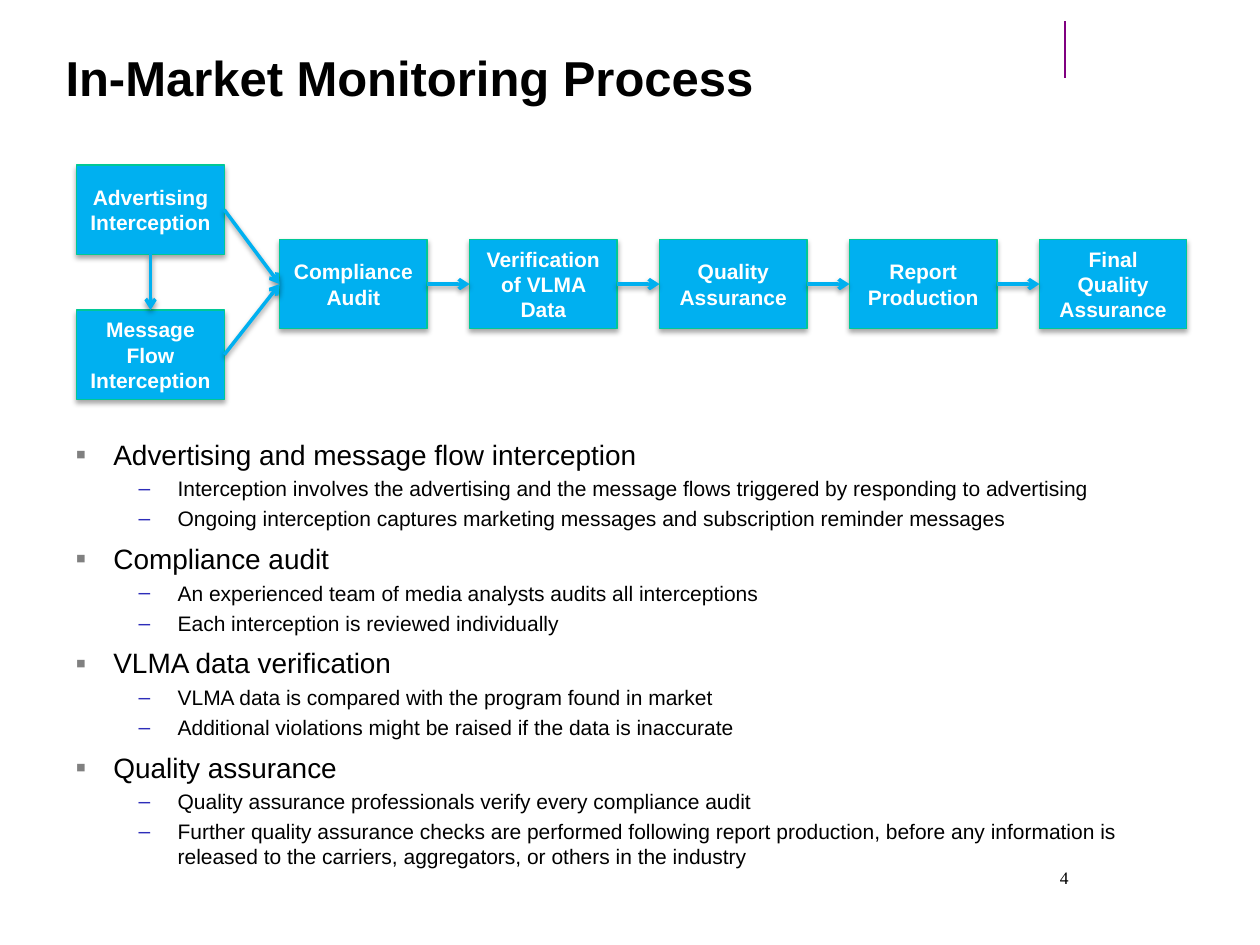
import pptx
import pptx.util
import pptx.dml.color
import pptx.enum.shapes
import pptx.enum.text
import pptx.oxml
import pptx.oxml.ns

Inches, Pt = pptx.util.Inches, pptx.util.Pt
Align = pptx.enum.text.PP_ALIGN
Anchor = pptx.enum.text.MSO_ANCHOR
Shape = pptx.enum.shapes.MSO_SHAPE
Straight = pptx.enum.shapes.MSO_CONNECTOR.STRAIGHT
NS = pptx.oxml.ns.nsdecls("a")


def tint(code):
    return pptx.dml.color.RGBColor.from_string(code)


def write(para, text, size, code="000000", bold=False, face="Arial"):
    run = para.add_run()
    run.text = text
    run.font.size = Pt(size)
    run.font.name = face
    run.font.bold = bold
    run.font.color.rgb = tint(code)


deck = pptx.Presentation()
deck.slide_width, deck.slide_height = Inches(10), Inches(7.5)
slide = deck.slides.add_slide(deck.slide_layouts[1])
shapes = slide.shapes

# Accent rule at the top right
rule = shapes.add_connector(Straight, Inches(8.45), Inches(0.17), Inches(8.45), Inches(0.62))
rule.line.color.rgb = tint("800080")
rule.line.width = Pt(1)
rule._element.spPr.append(pptx.oxml.parse_xml(f"<a:effectLst {NS}/>"))

# Title
title = shapes.title
title.left, title.top = Inches(0.42), Inches(0.36)
title.width, title.height = Inches(7.76), Inches(1.08)
frame = title.text_frame
frame.auto_size = pptx.enum.text.MSO_AUTO_SIZE.NONE
frame.vertical_anchor = Anchor.TOP
para = frame.paragraphs[0]
para.alignment = Align.LEFT
para.line_spacing = Pt(31)
write(para, "In-Market Monitoring Process", 28, bold=True)

# Slide number
number = shapes.add_textbox(Inches(7.25), Inches(6.83), Inches(1.33), Inches(0.5))
number.text_frame.word_wrap = True
para = number.text_frame.paragraphs[0]
para.alignment = Align.RIGHT
write(para, "4", 10, face="Times New Roman")

# Process boxes: two inputs on the left, then one row of five
row = ["Compliance Audit", "Verification of VLMA Data", "Quality Assurance",
       "Report Production", "Final Quality Assurance"]
step = (8.25 - 2.22) / 4
places = [("Advertising Interception", 0.61, 1.31),
          ("Message Flow Interception", 0.61, 2.46)]
places += [(text, 2.22 + i * step, 1.9) for i, text in enumerate(row)]
boxes = []
for text, left, top in places:
    box = shapes.add_shape(Shape.RECTANGLE, Inches(left), Inches(top), Inches(1.17), Inches(0.71))
    box.fill.solid()
    box.fill.fore_color.rgb = tint("00B0F0")
    box.line.color.rgb = tint("00C896")
    box.line.width = Pt(0.75)
    frame = box.text_frame
    frame.word_wrap = True
    frame.vertical_anchor = Anchor.MIDDLE
    para = frame.paragraphs[0]
    para.alignment = Align.CENTER
    write(para, text, 12, "FFFFFF", True)
    boxes.append(box)

# Arrows: start box, start side, end box, end side
links = [(0, 2, 1, 0), (0, 3, 2, 1), (1, 3, 2, 1)]
links += [(i, 3, i + 1, 1) for i in range(2, 6)]
arrows = []
for start, out, end, into in links:
    arrow = shapes.add_connector(Straight, 0, 0, 0, 0)
    arrow.begin_connect(boxes[start], out)
    arrow.end_connect(boxes[end], into)
    arrow.line.color.rgb = tint("00B0F0")
    arrow.line.width = Pt(2)
    line = arrow._element.spPr.find(pptx.oxml.ns.qn("a:ln"))
    line.append(pptx.oxml.parse_xml(f'<a:tailEnd {NS} type="arrow"/>'))
    arrows.append(arrow)

# Soft shadow below boxes and arrows
for part, drop, alpha in [(b, 1.8, 35) for b in boxes] + [(a, 1.6, 38) for a in arrows]:
    part._element.spPr.append(pptx.oxml.parse_xml(
        f'<a:effectLst {NS}><a:outerShdw blurRad="{Pt(3.1)}" dist="{Pt(drop)}" '
        f'dir="5400000" rotWithShape="0"><a:srgbClr val="000000">'
        f'<a:alpha val="{alpha * 1000}"/></a:srgbClr></a:outerShdw></a:effectLst>'))

# Bulleted list
topics = [
    ("Advertising and message flow interception", [
        "Interception involves the advertising and the message flows triggered by responding to advertising",
        "Ongoing interception captures marketing messages and subscription reminder messages"]),
    ("Compliance audit", [
        "An experienced team of media analysts audits all interceptions",
        "Each interception is reviewed individually"]),
    ("VLMA data verification", [
        "VLMA data is compared with the program found in market",
        "Additional violations might be raised if the data is inaccurate"]),
    ("Quality assurance", [
        "Quality assurance professionals verify every compliance audit",
        "Further quality assurance checks are performed following report production, before any "
        "information is released to the carriers, aggregators, or others in the industry"]),
]
# Per level: size, space before, margin, indent, bullet, bullet colour, bullet size
styles = [(16, 6, 0.3, -0.3, "▪", "808080", 108),
          (12, 2.8, 0.81, -0.31, "–", "2D2DB9", 100)]
body = slide.placeholders[1]
body.left, body.top = Inches(0.5), Inches(3.42)
body.width, body.height = Inches(9), Inches(3.67)
frame = body.text_frame
frame.auto_size = pptx.enum.text.MSO_AUTO_SIZE.NONE
frame.vertical_anchor = Anchor.TOP
items = []
for head, points in topics:
    items += [(0, head)] + [(1, point) for point in points]
for i, (level, text) in enumerate(items):
    size, space, margin, indent, mark, code, scale = styles[level]
    para = frame.add_paragraph() if i else frame.paragraphs[0]
    para.level = level
    para.space_before = Pt(space if i else 0)
    props = para._p.get_or_add_pPr()
    props.set("marL", str(Inches(margin)))
    props.set("indent", str(Inches(indent)))
    for tag in (f'<a:buClr {NS}><a:srgbClr val="{code}"/></a:buClr>',
                f'<a:buSzPct {NS} val="{scale * 1000}"/>',
                f'<a:buFont {NS} typeface="Arial"/>',
                f'<a:buChar {NS} char="{mark}"/>'):
        props.append(pptx.oxml.parse_xml(tag))
    write(para, text, size)

deck.save("out.pptx")
